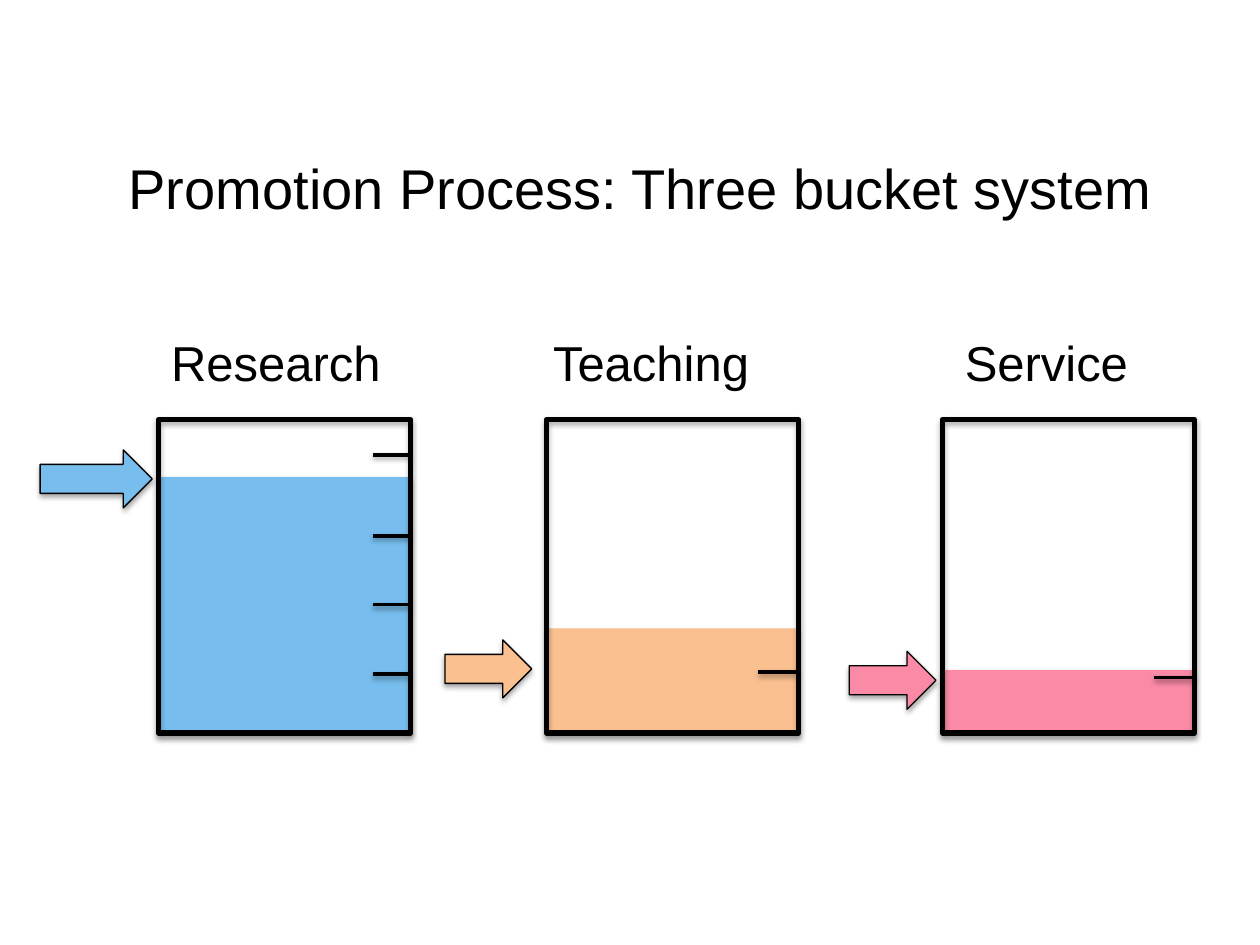
import lxml.etree
import pptx
import pptx.dml.color
import pptx.enum.shapes
import pptx.enum.text
import pptx.oxml.ns
import pptx.util

Cm = pptx.util.Cm
Pt = pptx.util.Pt
Kind = pptx.enum.shapes.MSO_SHAPE
Text = pptx.enum.text
qn = pptx.oxml.ns.qn

HUES = {"ink": "000000", "blue": "77BEEE", "peach": "FAC090", "pink": "FA8AA6"}
TOP, WIDE, HIGH = 8.46, 5.08, 6.32
FLOOR = TOP + HIGH

# name, bucket left, hue, fill height, (label left, width),
# (arrow left, top, width), tick length, tick heights
BUCKETS = [
    ("Research", 3.2, "blue", 5.16, (3.2, 4.78), (0.81, 9.07, 2.26),
     0.76, (13.59, 12.19, 10.8, 9.17)),
    ("Teaching", 11.02, "peach", 2.11, (10.9, 4.5), (8.97, 12.9, 1.75),
     0.81, (13.55,)),
    ("Service", 19.0, "pink", 1.27, (19.2, 3.84), (17.12, 13.13, 1.75),
     0.81, (13.66,)),
]


class Board:
    font = "Arial"

    def __init__(self, slide):
        self.slide = slide
        self.shapes = slide.shapes

    def hue(self, name):
        return pptx.dml.color.RGBColor.from_string(HUES[name])

    def shade(self, item, dist, alpha):
        """Give a shape or connector a soft shadow straight below it."""
        props = item._element.spPr
        glow = props.find(qn("a:effectLst"))
        if glow is None:
            glow = lxml.etree.SubElement(props, qn("a:effectLst"))
        drop = lxml.etree.SubElement(
            glow, qn("a:outerShdw"), blurRad=str(Pt(3.1)), dist=str(Pt(dist)),
            dir="5400000", rotWithShape="0")
        tint = lxml.etree.SubElement(drop, qn("a:srgbClr"), val=HUES["ink"])
        lxml.etree.SubElement(tint, qn("a:alpha"), val=str(alpha * 1000))

    def block(self, kind, left, top, wide, high, fill=None, line=0):
        item = self.shapes.add_shape(kind, Cm(left), Cm(top), Cm(wide), Cm(high))
        item.shadow.inherit = False
        if fill:
            item.fill.solid()
            item.fill.fore_color.rgb = self.hue(fill)
        else:
            item.fill.background()
        if line:
            item.line.color.rgb = self.hue("ink")
            item.line.width = Pt(line)
        else:
            item.line.fill.background()
        self.shade(item, 1.8, 35)

    def tick(self, home, right, size, y):
        item = home.add_connector(
            pptx.enum.shapes.MSO_CONNECTOR.STRAIGHT,
            Cm(right - size), Cm(y), Cm(right), Cm(y))
        item.line.color.rgb = self.hue("ink")
        item.line.width = Pt(2)
        self.shade(item, 1.6, 38)

    def letter(self, item, text, size):
        """Put one styled line of text into a shape."""
        frame = item.text_frame
        frame.word_wrap = False
        frame.auto_size = Text.MSO_AUTO_SIZE.SHAPE_TO_FIT_TEXT
        frame.vertical_anchor = Text.MSO_ANCHOR.TOP
        frame.text = text
        para = frame.paragraphs[0]
        para.alignment = Text.PP_ALIGN.LEFT
        para.font.name = self.font
        para.font.size = Pt(size)
        para.font.color.rgb = self.hue("ink")

    def title(self, text, left, top, wide, high):
        item = self.shapes.title
        item.left, item.top, item.width, item.height = map(
            Cm, (left, top, wide, high))
        self.letter(item, text, 32)

    def label(self, text, left, top, wide, high):
        item = self.shapes.add_textbox(Cm(left), Cm(top), Cm(wide), Cm(high))
        self.letter(item, text, 28)


def main():
    deck = pptx.Presentation()
    deck.slide_width, deck.slide_height = Cm(25.4), Cm(19.05)
    board = Board(deck.slides.add_slide(deck.slide_layouts[5]))
    board.title("Promotion Process: Three bucket system", 2.34, 2.97, 21.34, 1.63)

    for name, left, hue, level, label, arrow, size, marks in BUCKETS:
        board.block(Kind.RECTANGLE, left, FLOOR - level, WIDE, level, fill=hue)
        board.block(Kind.RECTANGLE, left, TOP, WIDE, HIGH, line=3)
        several = len(marks) > 1
        home = board.shapes.add_group_shape().shapes if several else board.shapes
        for y in marks:
            board.tick(home, left + WIDE, size, y)
        start, top, wide = arrow
        board.block(Kind.RIGHT_ARROW, start, top, wide, 1.17, fill=hue, line=0.75)
        board.label(name, label[0], 6.58, label[1], 1.45)

    deck.save("out.pptx")


if __name__ == "__main__":
    main()
